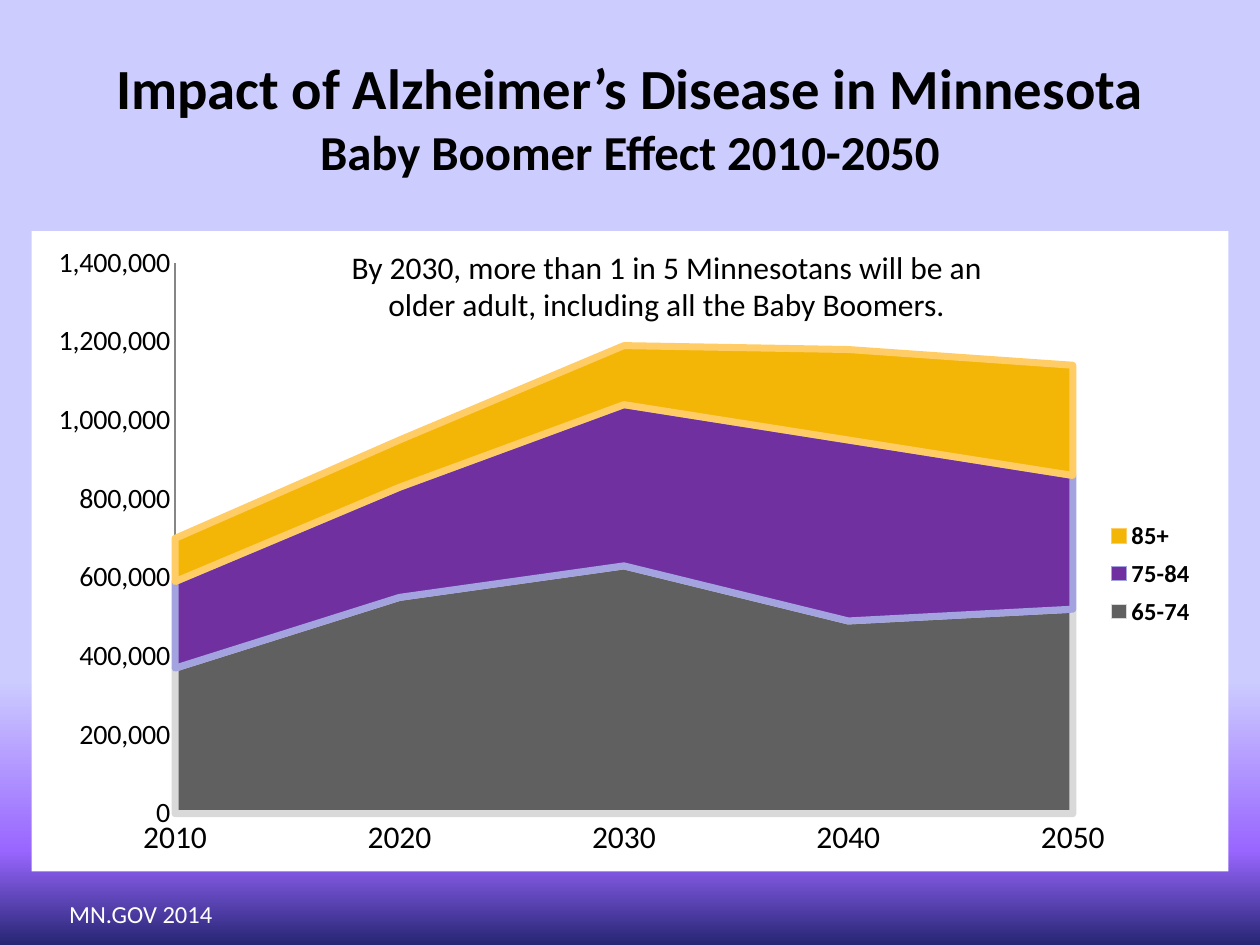
from copy import deepcopy
from dataclasses import dataclass

from lxml.etree import SubElement
from pptx import Presentation
from pptx.chart.data import CategoryChartData
from pptx.dml.color import RGBColor
from pptx.enum.chart import XL_CHART_TYPE, XL_LEGEND_POSITION, XL_TICK_MARK
from pptx.enum.text import MSO_ANCHOR, PP_ALIGN
from pptx.oxml import parse_xml
from pptx.oxml.ns import nsdecls, qn
from pptx.util import Pt

FACE = "Calibri"
BLACK, WHITE = "000000", "FFFFFF"


@dataclass
class Box:
    """A frame, in points on the slide or as shares of the chart."""
    left: float
    top: float
    width: float
    height: float

    def points(self) -> list:
        """Return the four lengths in points."""
        return [Pt(n) for n in (self.left, self.top, self.width, self.height)]


@dataclass
class Band:
    """One age group of the chart."""
    name: str
    counts: tuple
    fill: str
    edge: str


BANDS = [
    Band("65-74", (370000, 550000, 630000, 490000, 520000), "606060", "D9D9D9"),
    Band("75-84", (220000, 280000, 410000, 460000, 340000), "7030A0", "A3A3E0"),
    Band("85+", (110000, 120000, 150000, 230000, 280000), "F4B606", "FFCC66"),
]
STOPS = [(0.72, "CCCCFF"), (0.9, "9966FF"), (1, "262673")]


def tint(code: str) -> RGBColor:
    """Turn a hex string into a colour."""
    return RGBColor.from_string(code)


def style(font, size: float, color: str = BLACK, bold: bool = False) -> None:
    """Set face, size, colour and weight of a font."""
    font.name, font.size, font.bold = FACE, Pt(size), bold
    font.color.rgb = tint(color)


def write(slide, box: Box, text: str, *, sizes: tuple, color: str = BLACK,
          bold: bool = False, align=PP_ALIGN.LEFT, anchor=MSO_ANCHOR.TOP,
          wrap: bool = True) -> None:
    """Add a text box with one size for each line of text."""
    frame = slide.shapes.add_textbox(*box.points()).text_frame
    frame.word_wrap, frame.vertical_anchor = wrap, anchor
    para = frame.paragraphs[0]
    para.alignment = align
    for row, (line, size) in enumerate(zip(text.split("\n"), sizes)):
        if row:
            para.add_line_break()
        run = para.add_run()
        run.text = line
        style(run.font, size, color, bold)


def shade(slide) -> None:
    """Fill the background with the gradient, from top to bottom."""
    fill = slide.background.fill
    fill.gradient()
    fill.gradient_angle = 270
    stops = slide.element.find(".//" + qn("a:gsLst"))
    stops.append(deepcopy(stops[0]))
    for stop, (place, code) in zip(fill.gradient_stops, STOPS):
        stop.position = place
        stop.color.rgb = tint(code)


def fix(node, index: int, box: Box, inner: bool = False) -> None:
    """Give a chart part a fixed layout."""
    for old in node.findall(qn("c:layout")):
        node.remove(old)
    layout = parse_xml(f"<c:layout {nsdecls('c')}/>")
    node.insert(index, layout)
    manual = SubElement(layout, qn("c:manualLayout"))
    pairs = [("layoutTarget", "inner")] if inner else []
    pairs += [("xMode", "edge"), ("yMode", "edge"), ("x", box.left),
              ("y", box.top), ("w", box.width), ("h", box.height)]
    for tag, val in pairs:
        SubElement(manual, qn("c:" + tag)).set("val", str(val))


def paper() -> object:
    """Return a plain white fill for a chart part."""
    return parse_xml(
        f"<c:spPr {nsdecls('c', 'a')}><a:solidFill><a:srgbClr val='{WHITE}'/>"
        "</a:solidFill><a:ln><a:noFill/></a:ln></c:spPr>")


def plot(slide, box: Box) -> None:
    """Add the stacked area chart."""
    data = CategoryChartData(number_format="#,##0")
    data.categories = [str(year) for year in range(2010, 2051, 10)]
    for band in BANDS:
        data.add_series(band.name, band.counts)
    chart = slide.shapes.add_chart(
        XL_CHART_TYPE.AREA_STACKED, *box.points(), data).chart
    chart.has_title = False
    style(chart.font, 18)
    for part, band in zip(chart.plots[0].series, BANDS):
        part.format.fill.solid()
        part.format.fill.fore_color.rgb = tint(band.fill)
        part.format.line.color.rgb = tint(band.edge)
        part.format.line.width = Pt(4)

    years, scale = chart.category_axis, chart.value_axis
    for axis, size in ((years, 18), (scale, 16)):
        axis.has_major_gridlines = False
        axis.major_tick_mark = axis.minor_tick_mark = XL_TICK_MARK.NONE
        axis.format.line.color.rgb = tint("868686")
        axis.format.line.width = Pt(0.75)
        style(axis.tick_labels.font, size)
    scale.minimum_scale, scale.maximum_scale = 0, 1400000
    scale.major_unit = 200000
    scale.tick_labels.number_format = "#,##0"
    scale.tick_labels.number_format_is_linked = False

    chart.has_legend = True
    legend = chart.legend
    legend.position = XL_LEGEND_POSITION.RIGHT
    legend.include_in_layout = False
    style(legend.font, 14, bold=True)

    root = chart.element
    area = root.find(".//" + qn("c:plotArea"))
    fix(area, 0, Box(0.12, 0.05, 0.75, 0.86), inner=True)
    fix(root.find(".//" + qn("c:legend")), 1, Box(0.89, 0.44, 0.09, 0.19))
    for cross in root.iter(qn("c:crossBetween")):
        cross.set("val", "midCat")
    area.append(paper())
    root.find(qn("c:chart")).addnext(paper())


def main() -> None:
    """Build and save the slide."""
    deck = Presentation()
    deck.slide_width, deck.slide_height = Pt(720), Pt(540)
    slide = deck.slides.add_slide(deck.slide_layouts[6])
    shade(slide)
    write(slide, Box(36, 21.6, 648, 90),
          "Impact of Alzheimer’s Disease in Minnesota\n"
          "Baby Boomer Effect 2010-2050",
          sizes=(32.4, 27.9), bold=True, align=PP_ALIGN.CENTER,
          anchor=MSO_ANCHOR.MIDDLE)
    plot(slide, Box(18, 132, 684, 366))
    write(slide, Box(192, 138, 378, 51),
          "By 2030, more than 1 in 5 Minnesotans will be an older adult, "
          "including all the Baby Boomers.",
          sizes=(18,), align=PP_ALIGN.CENTER)
    write(slide, Box(32.4, 510, 97, 24.5), "MN.GOV 2014",
          sizes=(14,), color=WHITE, wrap=False)
    deck.save("out.pptx")


if __name__ == "__main__":
    main()
